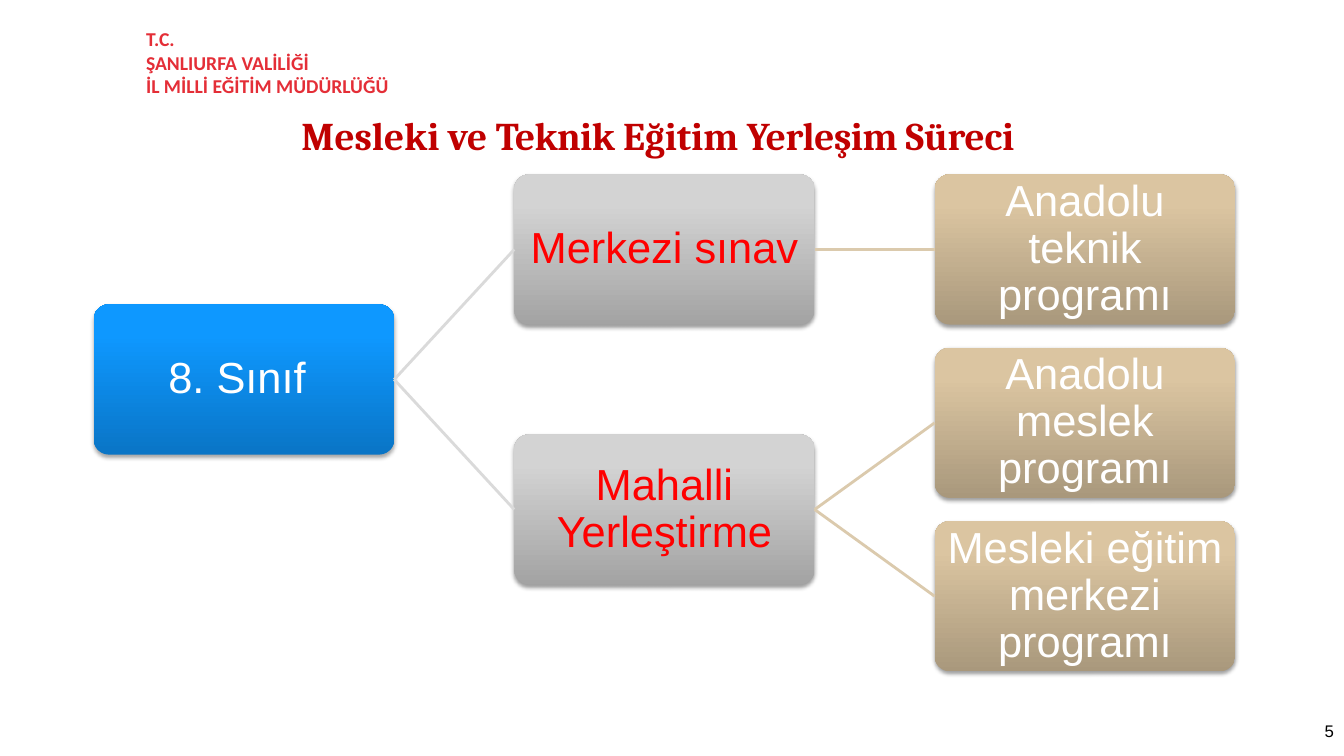
from dataclasses import dataclass, field

from lxml.etree import SubElement
from copy import deepcopy
from pptx import Presentation
from pptx.dml.color import RGBColor
from pptx.enum.shapes import MSO_CONNECTOR, MSO_SHAPE
from pptx.enum.text import MSO_ANCHOR, PP_ALIGN
from pptx.oxml.ns import qn
from pptx.util import Inches, Pt


@dataclass(frozen=True)
class Level:
    """Look of one column of the tree."""
    gradient: tuple
    text: str
    line: str
    shadow_distance: float
    shadow_alpha: int


@dataclass(frozen=True)
class Theme:
    white: str = "FFFFFF"
    black: str = "000000"
    header: str = "E42E37"
    title: str = "C00000"
    header_size: int = 14
    title_size: int = 28
    node_size: int = 31
    number_size: int = 12
    header_font: str = "Calibri"
    title_font: str = "Cambria"
    body_font: str = "Arial"
    levels: tuple = (
        Level(("0A75C6", "0E98FF", "1099FF"), "FFFFFF", "FFFFFF", 1.8, 35),
        Level(("A3A3A3", "D3D3D3", "D4D4D4"), "FF0000", "DADADA", 1.6, 38),
        Level(("A9987C", "DBC5A1", "DDC7A1"), "FFFFFF", "DBCAAD", 1.6, 38),
    )


@dataclass(frozen=True)
class Node:
    label: str
    children: list = field(default_factory=list)


THEME = Theme()
NODE_WIDTH, NODE_HEIGHT = 2.98, 1.49
TREE_LEFT, TREE_TOP = 0.93, 1.73
COLUMN_PITCH, ROW_PITCH = 4.17, 1.72
GRADIENT_POSITIONS = (0, 0.8, 1)

PLACEMENT = Node("8. Sınıf\t", [
    Node("Merkezi sınav", [Node("Anadolu teknik programı")]),
    Node("Mahalli Yerleştirme", [
        Node("Anadolu meslek programı"),
        Node("Mesleki eğitim merkezi programı"),
    ]),
])
HEADER_LINES = ("T.C.", "ŞANLIURFA VALİLİĞİ", "İL MİLLİ EĞİTİM MÜDÜRLÜĞÜ")
TITLE_SPANS = (("Mesleki ve ", 0), ("Teknik ", -30), ("Eğitim ", 0),
               ("Yerleşim ", -30), ("Süreci", -10))


def color(value):
    return RGBColor.from_string(value)


def add_span(para, text, font, size, value, bold=False):
    span = para.add_run()
    span.text = text
    span.font.name = font
    span.font.size = Pt(size)
    span.font.bold = bold
    span.font.color.rgb = color(value)
    return span


def set_margins(frame, side, top):
    frame.margin_left = frame.margin_right = Inches(side)
    frame.margin_top = frame.margin_bottom = Inches(top)


def add_text_box(page, left, top, width, height):
    box = page.shapes.add_textbox(Inches(left), Inches(top), Inches(width), Inches(height))
    box.text_frame.word_wrap = True
    return box.text_frame


def add_header(page):
    box = page.shapes.add_shape(MSO_SHAPE.RECTANGLE, Inches(1.35), Inches(0.31),
                                Inches(2.68), Inches(0.62))
    box.shadow.inherit = False
    box.fill.solid()
    box.fill.fore_color.rgb = color(THEME.white)
    box.line.fill.background()
    frame = box.text_frame
    frame.vertical_anchor = MSO_ANCHOR.MIDDLE
    for index, line in enumerate(HEADER_LINES):
        para = frame.add_paragraph() if index else frame.paragraphs[0]
        para.alignment = PP_ALIGN.LEFT
        add_span(para, line, THEME.header_font, THEME.header_size, THEME.header, bold=True)


def add_title(page):
    frame = add_text_box(page, 2.98, 1.09, 7.52, 0.49)
    set_margins(frame, 0.01, 0.01)
    for text, tracking in TITLE_SPANS:
        span = add_span(frame.paragraphs[0], text, THEME.title_font, THEME.title_size,
                        THEME.title, bold=True)
        span.font._element.set("spc", str(tracking))


def add_page_number(page):
    para = add_text_box(page, 11.57, 7.1, 1.76, 0.3).paragraphs[0]
    para.alignment = PP_ALIGN.RIGHT
    add_span(para, "5", THEME.body_font, THEME.number_size, THEME.black)


def fill_gradient(box, colors):
    box.fill.gradient()
    box.fill.gradient_angle = 90
    stop_list = box._element.spPr.find(qn("a:gradFill")).find(qn("a:gsLst"))
    stop_list.append(deepcopy(stop_list[-1]))
    for stop, position, value in zip(box.fill.gradient_stops, GRADIENT_POSITIONS, colors):
        stop.position = position
        stop.color.rgb = color(value)


def add_shadow(box, level):
    box.shadow.inherit = False
    effects = box._element.spPr.find(qn("a:effectLst"))
    shadow = SubElement(effects, qn("a:outerShdw"), blurRad=str(Pt(3.1)),
                        dist=str(Pt(level.shadow_distance)), dir="5400000", rotWithShape="0")
    shade = SubElement(shadow, qn("a:srgbClr"), val=THEME.black)
    SubElement(shade, qn("a:alpha"), val=str(level.shadow_alpha * 1000))


def add_node_box(page, label, depth, row):
    level = THEME.levels[depth]
    box = page.shapes.add_shape(
        MSO_SHAPE.ROUNDED_RECTANGLE,
        Inches(TREE_LEFT + depth * COLUMN_PITCH), Inches(TREE_TOP + row * ROW_PITCH),
        Inches(NODE_WIDTH), Inches(NODE_HEIGHT))
    box.adjustments[0] = 0.1
    fill_gradient(box, level.gradient)
    box.line.fill.background()
    add_shadow(box, level)
    frame = box.text_frame
    frame.word_wrap = True
    frame.vertical_anchor = MSO_ANCHOR.MIDDLE
    set_margins(frame, 0.06, 0.06)
    para = frame.paragraphs[0]
    para.alignment = PP_ALIGN.CENTER
    para.line_spacing = 0.9
    add_span(para, label, THEME.body_font, THEME.node_size, level.text)
    return box


def join(page, parent, child, line_color):
    link = page.shapes.add_connector(MSO_CONNECTOR.STRAIGHT, 0, 0, 0, 0)
    link.begin_connect(parent, 3)
    link.end_connect(child, 1)
    link.line.color.rgb = color(line_color)
    link.line.width = Pt(2)
    SubElement(link._element.spPr, qn("a:effectLst"))


def add_tree(page, node, rows, depth=0):
    """Give each leaf the next row, centre parents on their children; return box and row."""
    branches = [add_tree(page, child, rows, depth + 1) for child in node.children]
    if branches:
        row = (branches[0][1] + branches[-1][1]) / 2
    else:
        row = next(rows)
    box = add_node_box(page, node.label, depth, row)
    for child, _ in branches:
        join(page, box, child, THEME.levels[depth + 1].line)
    return box, row


def main():
    deck = Presentation()
    deck.slide_width, deck.slide_height = Inches(13.33), Inches(7.5)
    page = deck.slides.add_slide(deck.slide_layouts[6])
    add_page_number(page)
    add_header(page)
    add_tree(page, PLACEMENT, iter(range(3)))
    add_title(page)
    deck.save("out.pptx")


if __name__ == "__main__":
    main()
